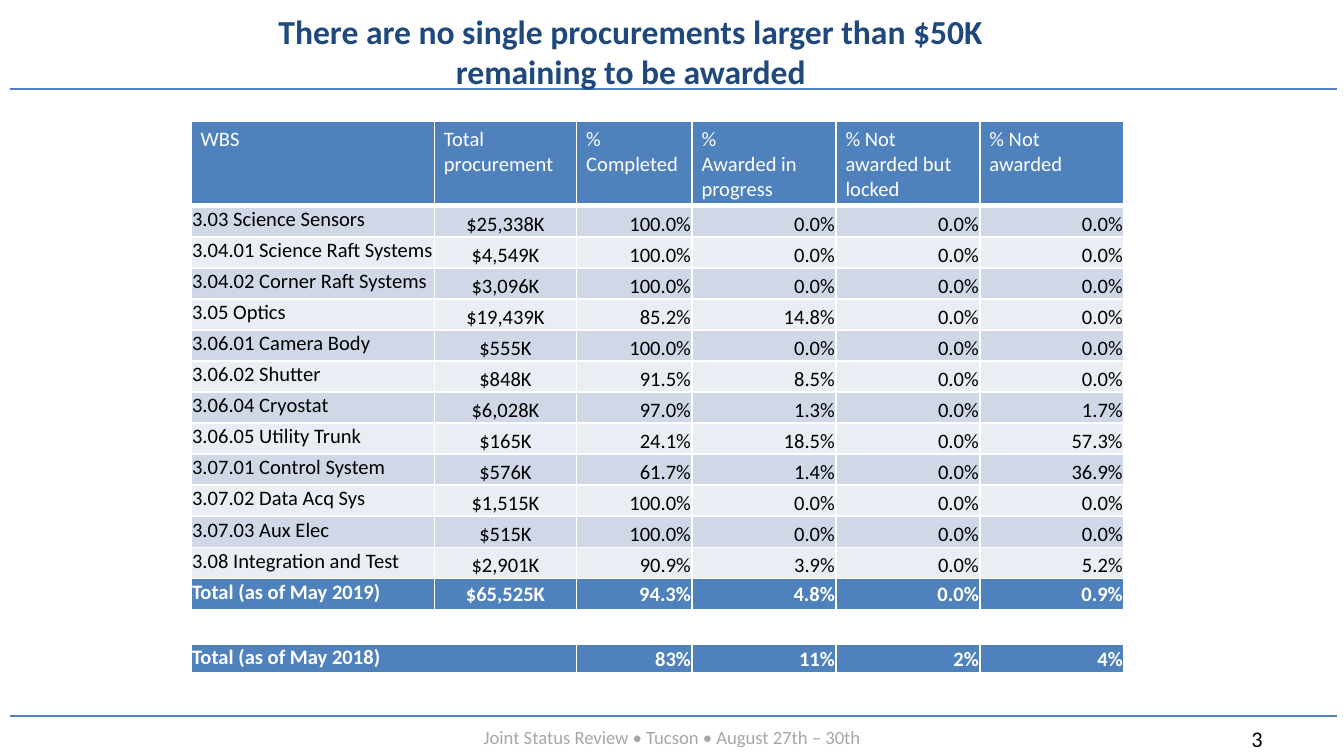
from lxml.etree import SubElement
from pptx import Presentation
from pptx.dml.color import RGBColor
from pptx.enum.shapes import MSO_CONNECTOR
from pptx.enum.text import MSO_ANCHOR, PP_ALIGN
from pptx.oxml.ns import qn
from pptx.util import Cm, Pt

HUES = {"blue": "4F81BD", "navy": "1F497D", "gray": "A6A6A6", "black": "000000",
        "white": "FFFFFF", "dark": "D0D8E8", "light": "E9EDF4"}

TITLE = "There are no single procurements larger than $50K remaining to be awarded"
FOOTER = "Joint Status Review • Tucson • August 27th – 30th"
PAGE = "3"

HEAD = ["WBS", "Total procurement", "% Completed", "%\nAwarded in progress",
        "% Not awarded but locked", "% Not awarded"]
ITEMS = [
    ["3.03 Science Sensors", "$25,338K", "100.0%", "0.0%", "0.0%", "0.0%"],
    ["3.04.01 Science Raft Systems", "$4,549K", "100.0%", "0.0%", "0.0%", "0.0%"],
    ["3.04.02 Corner Raft Systems", "$3,096K", "100.0%", "0.0%", "0.0%", "0.0%"],
    ["3.05 Optics", "$19,439K", "85.2%", "14.8%", "0.0%", "0.0%"],
    ["3.06.01 Camera Body", "$555K", "100.0%", "0.0%", "0.0%", "0.0%"],
    ["3.06.02 Shutter", "$848K", "91.5%", "8.5%", "0.0%", "0.0%"],
    ["3.06.04 Cryostat", "$6,028K", "97.0%", "1.3%", "0.0%", "1.7%"],
    ["3.06.05 Utility Trunk", "$165K", "24.1%", "18.5%", "0.0%", "57.3%"],
    ["3.07.01 Control System", "$576K", "61.7%", "1.4%", "0.0%", "36.9%"],
    ["3.07.02 Data Acq Sys", "$1,515K", "100.0%", "0.0%", "0.0%", "0.0%"],
    ["3.07.03 Aux Elec", "$515K", "100.0%", "0.0%", "0.0%", "0.0%"],
    ["3.08 Integration and Test", "$2,901K", "90.9%", "3.9%", "0.0%", "5.2%"],
]
TOTAL = ["Total (as of May 2019)", "$65,525K", "94.3%", "4.8%", "0.0%", "0.9%"]
PRIOR = ["Total (as of May 2018)", "83%", "11%", "2%", "4%"]

LEFT = 3.61
WIDTHS = [4.6, 2.69, 2.18, 2.72, 2.72, 2.72]
LEAD, CENTER, RIGHT = PP_ALIGN.LEFT, PP_ALIGN.CENTER, PP_ALIGN.RIGHT
ALIGNS = [LEAD, CENTER] + [RIGHT] * 4
TOP, MIDDLE, BOTTOM = MSO_ANCHOR.TOP, MSO_ANCHOR.MIDDLE, MSO_ANCHOR.BOTTOM


def tint(name):
    return RGBColor.from_string(HUES[name])


def apply(thing, values):
    for key, value in values.items():
        setattr(thing, key, value)


def style(frame, size, hue, align, bold=False):
    for para in frame.paragraphs:
        para.alignment = align
        for run in para.runs:
            apply(run.font, {"name": "Calibri", "size": Pt(size), "bold": bold})
            run.font.color.rgb = tint(hue)


def add_text(slide, text, place, size, hue, align, anchor=TOP, bold=False):
    frame = slide.shapes.add_textbox(*map(Cm, place)).text_frame
    apply(frame, {"word_wrap": True, "vertical_anchor": anchor, "text": text})
    style(frame, size, hue, align, bold)


def add_rule(slide, y):
    rule = slide.shapes.add_connector(
        MSO_CONNECTOR.STRAIGHT, Cm(25.27), Cm(y), Cm(0.18), Cm(y))
    rule.line.width = Pt(1)
    rule.line.color.rgb = tint("blue")
    SubElement(rule._element.spPr, qn("a:effectLst"))


def add_border(cell, base):
    props = cell._tc.get_or_add_tcPr()
    for side, width in (("L", 1), ("R", 1), ("T", 1), ("B", base)):
        edge = SubElement(props, qn(f"a:ln{side}"), w=str(Pt(width)))
        fill = SubElement(edge, qn("a:solidFill"))
        SubElement(fill, qn("a:srgbClr"), val=HUES["white"])


def fill_row(row, texts, aligns, fill, hue, anchor, bold=False, head=False, base=1):
    for col, (cell, text, align) in enumerate(zip(row.cells, texts, aligns)):
        side = Cm(0.18 if head else 0.02)
        apply(cell, {
            "text": text, "vertical_anchor": anchor,
            "margin_left": side, "margin_right": side,
            "margin_top": Cm(0.1 if head else 0.02),
            "margin_bottom": Cm(0.1 if head or col == 0 else 0)})
        style(cell.text_frame, 11, hue, align, bold)
        add_border(cell, base)
        cell.fill.solid()
        cell.fill.fore_color.rgb = tint(fill)


def add_grid(slide, top, widths, heights):
    grid = slide.shapes.add_table(
        len(heights), len(widths), Cm(LEFT), Cm(top),
        Cm(sum(widths)), Cm(sum(heights))).table
    apply(grid, {"first_row": False, "horz_banding": False})
    for col, width in zip(grid.columns, widths):
        col.width = Cm(width)
    for row, height in zip(grid.rows, heights):
        row.height = Cm(height)
    return list(grid.rows)


def main():
    deck = Presentation()
    apply(deck, {"slide_width": Cm(25.4), "slide_height": Cm(14.29)})
    slide = deck.slides.add_slide(deck.slide_layouts[6])

    for y in (13.54, 1.68):
        add_rule(slide, y)
    add_text(slide, PAGE, (23.4, 13.59, 1.57, 0.76), 12, "black", LEAD)
    add_text(slide, FOOTER, (1.27, 13.59, 22.86, 0.69), 10, "gray", CENTER)
    add_text(slide, TITLE, (3.86, 0.38, 16.13, 1.17), 18, "navy", CENTER, MIDDLE, True)

    rows = add_grid(slide, 2.29, WIDTHS, [1.52] + [0.56] * (len(ITEMS) + 1))
    fill_row(rows[0], HEAD, [LEAD] * len(HEAD), "blue", "white", TOP, head=True, base=3)
    for i, (row, item) in enumerate(zip(rows[1:], ITEMS)):
        fill_row(row, item, ALIGNS, ("dark", "light")[i % 2], "black", BOTTOM)
    fill_row(rows[-1], TOTAL, ALIGNS, "blue", "white", MIDDLE, bold=True)

    spans = [sum(WIDTHS[:2])] + WIDTHS[2:]
    prior = add_grid(slide, 12.17, spans, [0.58])
    fill_row(prior[0], PRIOR, [LEAD] + ALIGNS[2:], "blue", "white", MIDDLE, bold=True, base=3)

    deck.save("out.pptx")


if __name__ == "__main__":
    main()
